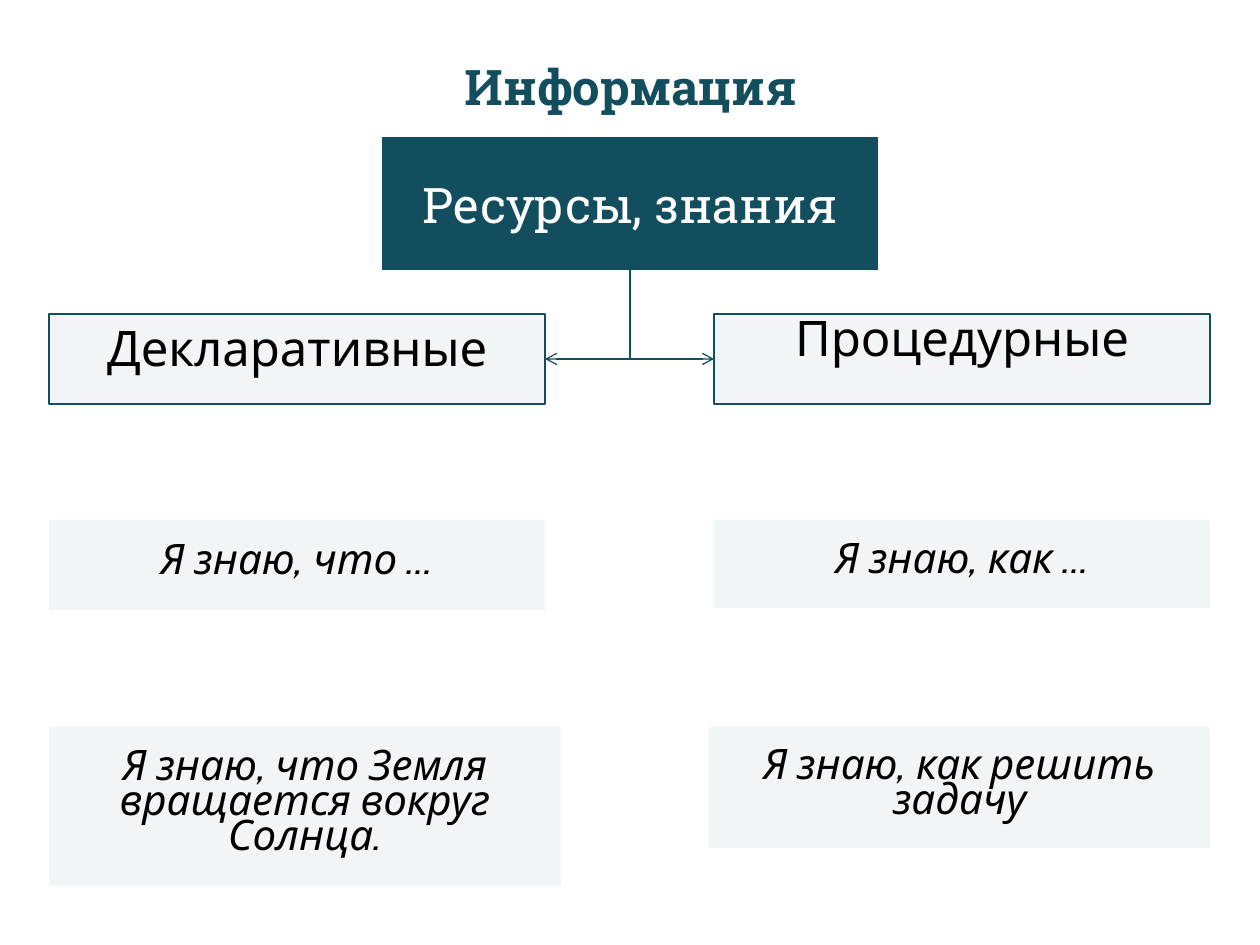
"""Builds the slide on declarative and procedural knowledge."""
from dataclasses import dataclass

import pptx
import pptx.dml.color
import pptx.enum.shapes
import pptx.enum.text
import pptx.oxml.ns
import pptx.util
from lxml import etree

PX = 914400 // 126
LEFT, RIGHT, WIDTH = 49, 714, 496
INSET = 25
COLORS = {"teal": "134E5E", "white": "FFFFFF", "black": "000000"}
MIDDLE = pptx.enum.text.MSO_ANCHOR.MIDDLE
TOP = pptx.enum.text.MSO_ANCHOR.TOP
qn = pptx.oxml.ns.qn


@dataclass
class Card:
    """A pale box with one centred statement."""
    text: str
    left: int
    top: int
    width: int
    height: int
    size: int = 24
    italic: bool = True
    outlined: bool = False
    anchor: pptx.enum.text.MSO_ANCHOR = MIDDLE
    space_after: int = 12


def px(length: int) -> int:
    """Turn pixels into EMU."""
    return pptx.util.Emu(length * PX)


def rgb(name: str) -> pptx.dml.color.RGBColor:
    """Look up a named colour."""
    return pptx.dml.color.RGBColor.from_string(COLORS[name])


def write(shape, text: str, size: int, font: str, color: str,
          bold: bool = False, italic: bool = False):
    """Put one centred, formatted paragraph into a shape."""
    shape.text_frame.word_wrap = True
    paragraph = shape.text_frame.paragraphs[0]
    paragraph.text = text
    paragraph.alignment = pptx.enum.text.PP_ALIGN.CENTER
    style = paragraph.runs[0].font
    style.size, style.name = pptx.util.Pt(size), font
    style.bold, style.italic = bold, italic
    style.color.rgb = rgb(color)
    return paragraph


def add_box(slide, preset, left: int, top: int, width: int, height: int, anchor):
    """Add a teal shape with even insets."""
    box = slide.shapes.add_shape(preset, px(left), px(top), px(width), px(height))
    box.shadow.inherit = False
    box.fill.solid()
    box.fill.fore_color.rgb = rgb("teal")
    box.line.fill.background()
    frame = box.text_frame
    frame.margin_left = frame.margin_right = px(INSET)
    frame.margin_top = frame.margin_bottom = px(INSET)
    frame.vertical_anchor = anchor
    return box


def add_card(slide, card: Card):
    """Add a card with a translucent fill."""
    box = add_box(slide, pptx.enum.shapes.MSO_SHAPE.RECTANGLE,
                  card.left, card.top, card.width, card.height, card.anchor)
    tint = box._element.spPr.find(qn("a:solidFill"))[0]
    etree.SubElement(tint, qn("a:alpha")).set("val", "5000")
    if card.outlined:
        box.line.color.rgb = rgb("teal")
        box.line.width = pptx.util.Pt(1)
    paragraph = write(box, card.text, card.size, "Cabin", "black", italic=card.italic)
    paragraph.line_spacing = pptx.util.Pt(20)
    paragraph.space_after = pptx.util.Pt(card.space_after)
    box.text_frame.auto_size = pptx.enum.text.MSO_AUTO_SIZE.SHAPE_TO_FIT_TEXT
    return box


def add_branch(slide, root, kind, site: int, quarter_turns: int, flipped: bool) -> None:
    """Join the root to a kind of knowledge with a single-bend arrow."""
    branch = slide.shapes.add_connector(pptx.enum.shapes.MSO_CONNECTOR.ELBOW, 0, 0, 0, 0)
    branch.begin_connect(root, 2)
    branch.end_connect(kind, site)
    start_x, start_y = root.left + root.width // 2, root.top + root.height
    end_x = kind.left + (kind.width if site == 3 else 0)
    end_y = kind.top + kind.height // 2
    run, drop = abs(end_x - start_x), end_y - start_y
    branch.left = (start_x + end_x - drop) // 2
    branch.top = (start_y + end_y - run) // 2
    branch.width, branch.height = drop, run
    properties = branch._element.spPr
    properties.find(qn("a:prstGeom")).set("prst", "bentConnector2")
    turn = properties.find(qn("a:xfrm"))
    turn.set("rot", str(quarter_turns * 5400000))
    turn.set("flipH", str(int(flipped)))
    branch.line.color.rgb = rgb("teal")
    branch.line.width = pptx.util.Pt(0.75)
    line = properties.find(qn("a:ln"))
    etree.SubElement(line, qn("a:tailEnd")).set("type", "arrow")
    etree.SubElement(properties, qn("a:effectLst"))


def main() -> None:
    """Build and save the slide."""
    deck = pptx.Presentation()
    deck.slide_width, deck.slide_height = pptx.util.Inches(10), pptx.util.Inches(7.5)
    slide = deck.slides.add_slide(deck.slide_layouts[6])

    resources = add_box(slide, pptx.enum.shapes.MSO_SHAPE.FLOWCHART_PROCESS,
                        382, 137, WIDTH, 133, MIDDLE)
    write(resources, "Ресурсы, знания", 28, "Roboto Slab", "white")

    procedural = add_card(slide, Card("Процедурные", RIGHT, 314, WIDTH, 90, 28,
                                      italic=False, outlined=True, anchor=TOP))
    declarative = add_card(slide, Card("Декларативные", LEFT, 314, WIDTH, 90, 28,
                                       italic=False, outlined=True))
    add_branch(slide, resources, procedural, 1, 3, True)
    add_branch(slide, resources, declarative, 3, 1, False)

    statements = [
        Card("Я знаю, что …", LEFT, 520, WIDTH, 90),
        Card("Я знаю, как …", RIGHT, 520, WIDTH, 88, space_after=0),
        Card("Я знаю, что Земля вращается вокруг Солнца.", LEFT, 727, 512, 159),
        Card("Я знаю, как решить задачу", 709, 727, 501, 121),
    ]
    for statement in statements:
        add_card(slide, statement)

    title = slide.shapes.add_textbox(px(330), px(50), px(602), px(72))
    write(title, "Информация", 28, "Roboto Slab", "teal", bold=True)
    title.text_frame.auto_size = pptx.enum.text.MSO_AUTO_SIZE.SHAPE_TO_FIT_TEXT

    deck.save("out.pptx")


if __name__ == "__main__":
    main()
